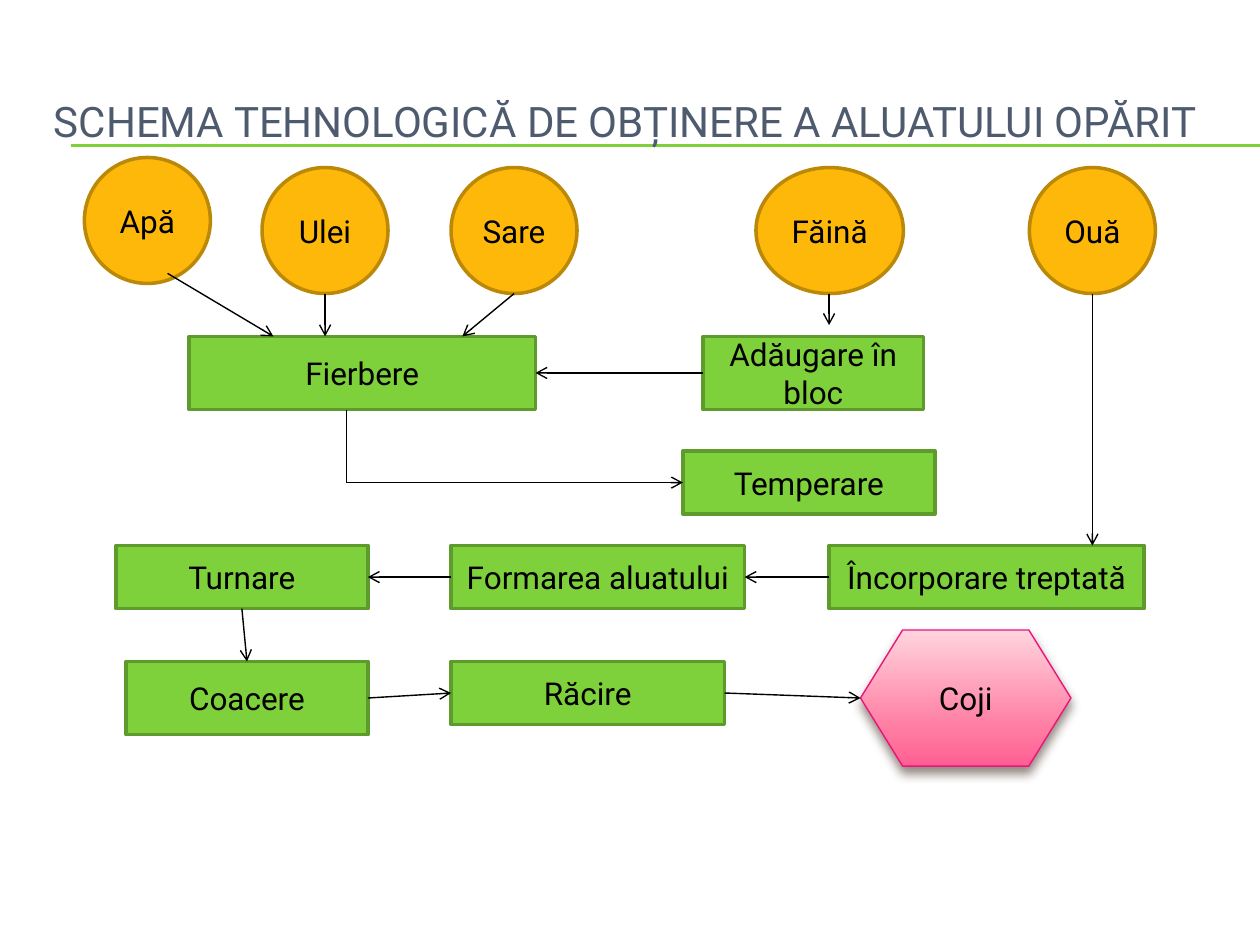
"""Builds the flow chart of how choux pastry is made."""
import dataclasses

import lxml.etree
import pptx
import pptx.dml.color
import pptx.enum.shapes
import pptx.enum.text
import pptx.oxml.ns
import pptx.util

Inches = pptx.util.Inches
Shape = pptx.enum.shapes.MSO_SHAPE
Align = pptx.enum.text.PP_ALIGN
qn = pptx.oxml.ns.qn
TOP, LEFT, BOTTOM, RIGHT = range(4)


@dataclasses.dataclass(frozen=True)
class Theme:
    font: str = "Roboto"
    title_size: float = 24
    label_size: float = 18
    title: str = "4E5B6F"
    ink: str = "000000"
    step: tuple = ("7FD13B", "5E9B2C")
    ingredient: tuple = ("FEB80A", "BC8807")
    product: tuple = ((0, "FFD4DE"), (72, "FF7DA2"), (100, "FF5F92"))
    product_line: str = "EA157A"
    shadow: str = "4E3B30"
    outline: float = 2
    thin: float = 0.79
    rule: float = 0.75


def rgb(code):
    return pptx.dml.color.RGBColor.from_string(code)


def add_xml(parent, tag, **attributes):
    return lxml.etree.SubElement(parent, qn(tag), attributes)


def write(frame, text, *, font, size, color, align=Align.CENTER):
    frame.word_wrap = True
    frame.vertical_anchor = pptx.enum.text.MSO_ANCHOR.MIDDLE
    paragraph = frame.paragraphs[0]
    paragraph.alignment = align
    run = paragraph.add_run()
    run.text = text
    run.font.name = font
    run.font.size = pptx.util.Pt(size)
    run.font.color.rgb = rgb(color)


class FlowChart:
    def __init__(self, slide, theme):
        self.slide = slide
        self.theme = theme

    def title(self, text, left, top, width, height):
        box = self.slide.shapes.add_textbox(*map(Inches, (left, top, width, height)))
        write(box.text_frame, text, font=self.theme.font, size=self.theme.title_size,
              color=self.theme.title, align=Align.LEFT)

    def node(self, kind, text, left, top, width, height, line, weight):
        node = self.slide.shapes.add_shape(kind, *map(Inches, (left, top, width, height)))
        node.shadow.inherit = False
        node.line.color.rgb = rgb(line)
        node.line.width = pptx.util.Pt(weight)
        write(node.text_frame, text, font=self.theme.font, size=self.theme.label_size,
              color=self.theme.ink)
        return node

    def step(self, text, left, top, width, height=0.5):
        fill, line = self.theme.step
        step = self.node(Shape.RECTANGLE, text, left, top, width, height, line, self.theme.outline)
        step.fill.solid()
        step.fill.fore_color.rgb = rgb(fill)
        return step

    def ingredient(self, text, left, top=1.33, width=1):
        fill, line = self.theme.ingredient
        ingredient = self.node(Shape.OVAL, text, left, top, width, 1, line, self.theme.outline)
        ingredient.fill.solid()
        ingredient.fill.fore_color.rgb = rgb(fill)

    def product(self, text, left, top, width, height):
        product = self.node(Shape.FLOWCHART_PREPARATION, text, left, top, width, height,
                            self.theme.product_line, self.theme.thin)
        product.fill.gradient()
        product.fill.gradient_angle = 270
        properties = product.element.spPr
        stops = properties.find(".//" + qn("a:gsLst"))
        for stop in list(stops):
            stops.remove(stop)
        for percent, color in self.theme.product:
            stop = add_xml(stops, "a:gs", pos=str(percent * 1000))
            add_xml(stop, "a:srgbClr", val=color)
        shadow = add_xml(properties.find(qn("a:effectLst")), "a:outerShdw",
                         blurRad=str(pptx.util.Pt(6)), dist=str(pptx.util.Pt(4)),
                         dir="5400000", rotWithShape="0")
        color = add_xml(shadow, "a:srgbClr", val=self.theme.shadow)
        add_xml(color, "a:alpha", val="60000")
        return product

    def line(self, start, end, color, weight):
        line = self.slide.shapes.add_connector(
            pptx.enum.shapes.MSO_CONNECTOR.STRAIGHT, *map(Inches, (*start, *end)))
        line.line.color.rgb = rgb(color)
        line.line.width = pptx.util.Pt(weight)
        add_xml(line.element.spPr, "a:effectLst")
        return line

    def flow(self, start, end, arrow=True):
        """Draws a flow line whose ends are points or (node, side) pairs."""
        points = [(0, 0) if hasattr(place[0], "shape_id") else place for place in (start, end)]
        flow = self.line(*points, self.theme.ink, self.theme.thin)
        for place, connect in ((start, flow.begin_connect), (end, flow.end_connect)):
            if hasattr(place[0], "shape_id"):
                connect(*place)
        if arrow:
            add_xml(flow.element.spPr.find(qn("a:ln")), "a:tailEnd", type="arrow")


def main():
    deck = pptx.Presentation()
    deck.slide_width, deck.slide_height = Inches(10), Inches(7.5)
    theme = Theme()
    chart = FlowChart(deck.slides.add_slide(deck.slide_layouts[6]), theme)

    for y in (1.15, 1.16):
        chart.line((0.56, y), (10, y), theme.step[0], theme.rule)
    chart.title("SCHEMA TEHNOLOGICĂ DE OBȚINERE A ALUATULUI OPĂRIT", 0.33, 0.5, 9.5, 0.92)

    boiling = chart.step("Fierbere", 1.5, 2.67, 2.75, 0.58)
    adding = chart.step("Adăugare în bloc", 5.58, 2.67, 1.75, 0.58)
    tempering = chart.step("Temperare", 5.42, 3.58, 2)
    pouring = chart.step("Turnare", 0.92, 4.33, 2)
    forming = chart.step("Formarea aluatului", 3.58, 4.33, 2.33)
    mixing = chart.step("Încorporare treptată", 6.58, 4.33, 2.5)
    baking = chart.step("Coacere", 1, 5.25, 1.92, 0.58)
    cooling = chart.step("Răcire", 3.58, 5.25, 2.17)

    chart.ingredient("Apă", 0.67, top=1.25)
    chart.ingredient("Ulei", 2.08)
    chart.ingredient("Sare", 3.58)
    chart.ingredient("Făină", 6, width=1.17)
    chart.ingredient("Ouă", 8.17)
    shells = chart.product("Coji", 6.83, 5, 1.67, 1.08)

    for start, end in (
        ((1.33, 2.17), (2.17, 2.67)),
        ((2.58, 2.33), (2.58, 2.67)),
        ((4.08, 2.33), (3.67, 2.67)),
        ((6.58, 2.33), (6.58, 2.58)),
        ((8.67, 2.33), (8.67, 4.33)),
        ((adding, LEFT), (boiling, RIGHT)),
        ((2.75, 3.83), (tempering, LEFT)),
        ((mixing, LEFT), (forming, RIGHT)),
        ((forming, LEFT), (pouring, RIGHT)),
        ((pouring, BOTTOM), (baking, TOP)),
        ((baking, RIGHT), (cooling, LEFT)),
        ((cooling, RIGHT), (shells, LEFT)),
    ):
        chart.flow(start, end)
    chart.flow((2.75, 3.25), (2.75, 3.83), arrow=False)

    deck.save("out.pptx")


if __name__ == "__main__":
    main()
